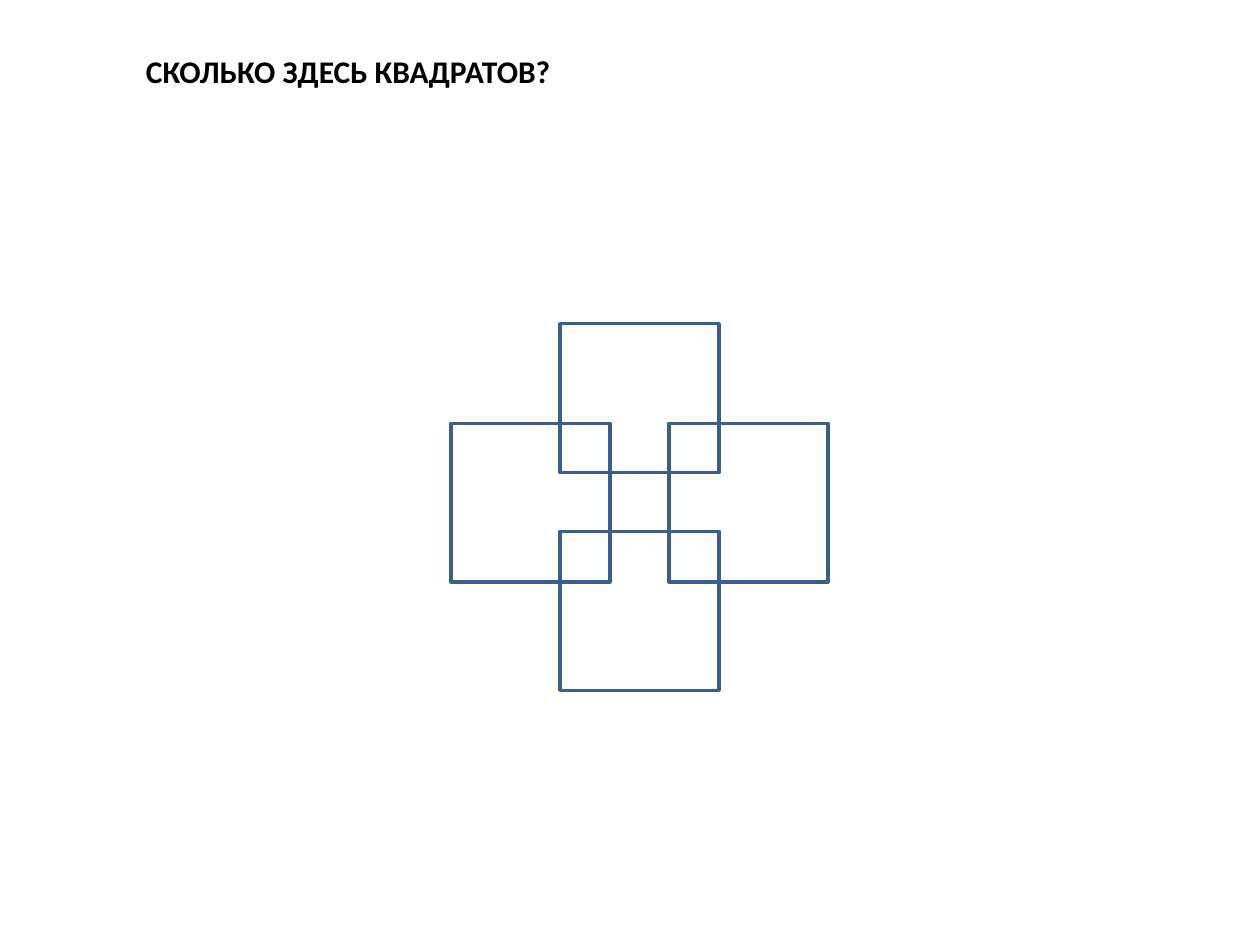
from pptx import Presentation
from pptx.dml.color import RGBColor
from pptx.enum.shapes import MSO_SHAPE as Shape
from pptx.enum.text import MSO_ANCHOR as Anchor, PP_ALIGN as Align
from pptx.util import Pt

COLORS = {"text": "000000", "outline": "3A5F8C", "background": "FFFFFF"}


def add_question(slide, left, top, width, height):
    question = slide.shapes.add_textbox(Pt(left), Pt(top), Pt(width), Pt(height))
    frame = question.text_frame
    frame.word_wrap = True
    frame.vertical_anchor = Anchor.TOP
    frame.text = "СКОЛЬКО ЗДЕСЬ КВАДРАТОВ?"
    paragraph = frame.paragraphs[0]
    paragraph.alignment = Align.LEFT
    font = paragraph.runs[0].font
    font.name = "Calibri"
    font.size = Pt(18)
    font.bold = True
    font.color.rgb = RGBColor.from_string(COLORS["text"])


def add_puzzle(slide, left, top, width, height, side, top_height):
    center_x = left + (width - side) / 2
    bottom_y = top + height - side
    middle_y = top + 56.9
    squares = [
        (center_x, top, top_height),
        (center_x, bottom_y, side),
        (left + width - side, middle_y, side),
        (left, middle_y, side),
    ]
    for x, y, square_height in squares:
        square = slide.shapes.add_shape(
            Shape.RECTANGLE, Pt(x), Pt(y), Pt(side), Pt(square_height)
        )
        square.shadow.inherit = False
        square.fill.background()
        square.line.color.rgb = RGBColor.from_string(COLORS["outline"])
        square.line.width = Pt(2)


def main():
    deck = Presentation()
    deck.slide_width, deck.slide_height = Pt(720), Pt(540)
    slide = deck.slides.add_slide(deck.slide_layouts[6])
    background = slide.background.fill
    background.solid()
    background.fore_color.rgb = RGBColor.from_string(COLORS["background"])
    add_question(slide, 76.3, 25.9, 612, 107.3)
    add_puzzle(slide, 257.8, 185, 215.3, 209.5, side=90.7, top_height=85)
    deck.save("out.pptx")


if __name__ == "__main__":
    main()
